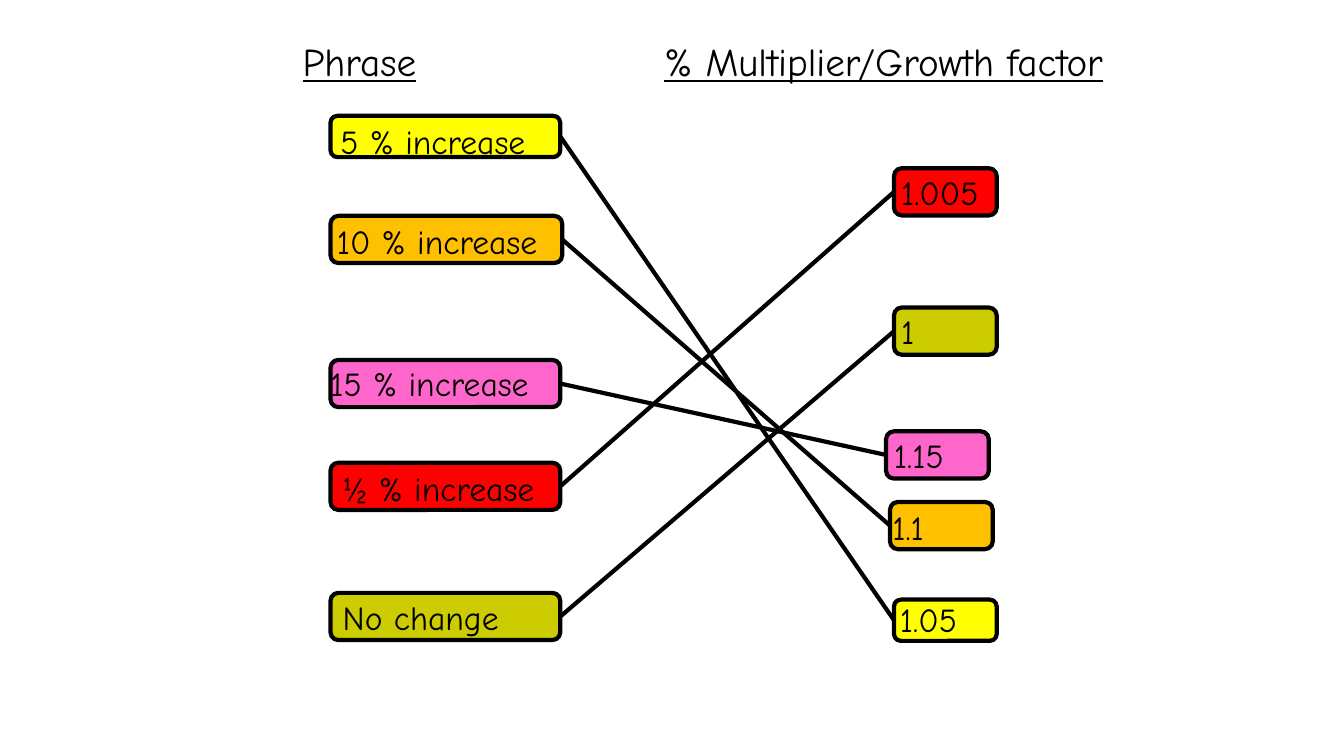
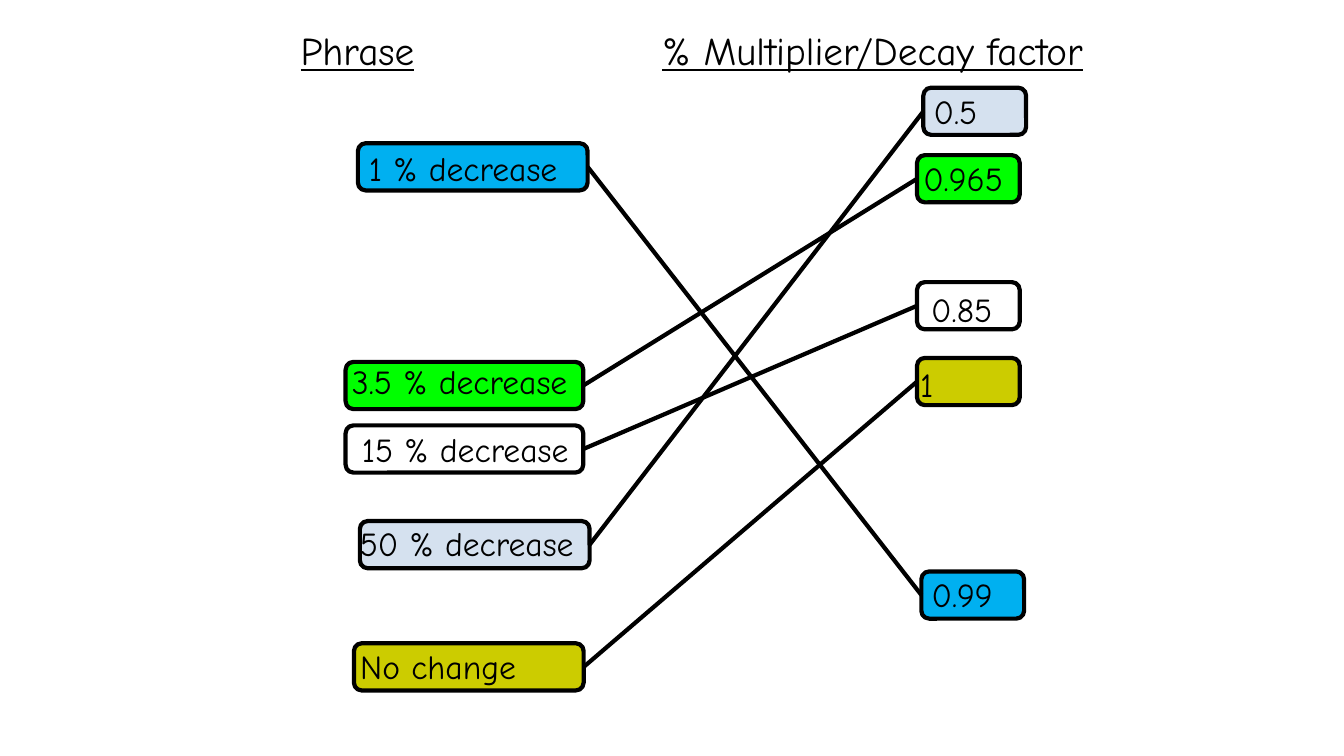
"""Build two matching exercises that link percentage phrases to their multipliers."""
from dataclasses import dataclass
from typing import Any, Optional

from lxml.etree import SubElement as add_element
from pptx import Presentation
from pptx.dml.color import RGBColor
from pptx.enum.shapes import MSO_CONNECTOR as Connector, MSO_SHAPE as Preset
from pptx.enum.text import MSO_ANCHOR as Anchor, MSO_AUTO_SIZE as AutoSize, PP_ALIGN as Align
from pptx.oxml.ns import qn
from pptx.util import Cm, Pt

INK = "000000"
YELLOW, AMBER, PINK, RED, OLIVE = "FFFF00", "FFC000", "FF66CC", "FF0000", "CCCC00"
SKY, GREEN, PALE = "00B0F0", "00FF00", "D5E1EF"
OUTLINE = Pt(3)
FACTOR_COLUMN = Cm(9.12)
LEFT_SITE, RIGHT_SITE = 1, 3

LABEL_FONT = {"name": "Comic Neue", "size": Pt(24), "bold": False}
HEADING_FONT = {**LABEL_FONT, "size": Pt(28)}
LABEL_FRAME = {"word_wrap": True, "auto_size": AutoSize.NONE, "vertical_anchor": Anchor.TOP,
               "margin_right": 0, "margin_bottom": 0}
HEADING_FRAME = {"word_wrap": True, "auto_size": AutoSize.NONE, "vertical_anchor": Anchor.TOP}


@dataclass(frozen=True)
class Label:
    """One box: its words, place and text insets in centimetres."""
    words: str
    left: float
    top: float
    inset_left: float
    inset_top: float
    width: float = 2.59


@dataclass(frozen=True)
class Match:
    """A phrase and the factor it is joined to."""
    colour: Optional[str]
    phrase: Label
    factor: Label
    phrase_height: float = 1.19
    factor_height: float = 1.19


@dataclass(frozen=True)
class Exercise:
    """One slide of matches under a two-column heading."""
    factor_heading: str
    heading_left: float
    heading_top: float
    matches: tuple[Match, ...]


EXERCISES = (
    Exercise("% Multiplier/Growth factor", 7.37, 0.81, (
        Match(YELLOW, Label("5 % increase", 8.33, 2.92, 0.2, 0.07, 5.79),
              Label("1.05", 22.53, 15.11, 0.1, -0.08), 1.04, 1.04),
        Match(AMBER, Label("10 % increase", 8.33, 5.44, 0.1, 0.07, 5.84),
              Label("1.1", 22.43, 12.65, 0, 0.07)),
        Match(PINK, Label("15 % increase", 8.33, 9.07, -0.06, 0.02, 5.79),
              Label("1.15", 22.33, 10.87, 0.14, 0.04)),
        Match(RED, Label("½ % increase", 8.33, 11.66, 0.25, 0.07, 5.79),
              Label("1.005", 22.53, 4.24, 0.12, 0.04)),
        Match(OLIVE, Label("No change", 8.33, 14.94, 0.25, 0.04, 5.79),
              Label("1", 22.53, 7.75, 0.12, 0.02)),
    )),
    Exercise("% Multiplier/Decay factor", 7.32, 0.53, (
        Match(SKY, Label("1 % decrease", 9.02, 3.61, 0.22, 0.07, 5.79),
              Label("0.99", 23.22, 14.4, 0.2, 0)),
        Match(GREEN, Label("3.5 % decrease", 8.71, 9.12, 0.1, -0.08, 5.99),
              Label("0.965", 23.11, 3.91, 0.1, 0.02)),
        Match(None, Label("15 % decrease", 8.71, 10.72, 0.35, 0.02, 5.99),
              Label("0.85", 23.11, 7.11, 0.3, 0.12)),
        Match(PALE, Label("50 % decrease", 9.07, 13.13, -0.06, 0, 5.79),
              Label("0.5", 23.27, 2.21, 0.2, 0.02)),
        Match(OLIVE, Label("No change", 8.92, 16.21, 0.1, 0.02, 5.79),
              Label("1", 23.11, 9.02, 0.02, 0.1)),
    )),
)


def apply(target: Any, values: dict[str, Any]) -> None:
    """Set every named value on the target."""
    for attribute, value in values.items():
        setattr(target, attribute, value)


def paint(colour_format: Any, colour: str) -> None:
    """Give a colour format a hex colour."""
    colour_format.rgb = RGBColor.from_string(colour)


def ink_outline(shape: Any) -> None:
    """Draw the shared outline on a box or connector."""
    shape.line.width = OUTLINE
    shape.line.fill.solid()
    paint(shape.line.fill.fore_color, INK)


def add_run(paragraph: Any, words: str, font: dict[str, Any], underline: bool = False) -> None:
    """Append one formatted run."""
    run = paragraph.add_run()
    run.text = words
    apply(run.font, {**font, "underline": underline})
    paint(run.font.color, INK)


def add_heading(slide: Any, exercise: Exercise) -> None:
    """Write the two underlined column headings in the title."""
    heading = slide.shapes.title
    apply(heading, {"left": Cm(exercise.heading_left), "top": Cm(exercise.heading_top),
                    "width": Cm(22.33), "height": Cm(1.45)})
    apply(heading.text_frame, HEADING_FRAME)
    paragraph = heading.text_frame.paragraphs[0]
    paragraph.alignment = Align.LEFT
    tabs = add_element(paragraph._p.get_or_add_pPr(), qn("a:tabLst"))
    add_element(tabs, qn("a:tab"), pos=str(int(FACTOR_COLUMN)), algn="l")
    add_run(paragraph, "Phrase", HEADING_FONT, True)
    add_run(paragraph, "\t", HEADING_FONT)
    add_run(paragraph, exercise.factor_heading, HEADING_FONT, True)


def add_label(slide: Any, label: Label, height: float, colour: Optional[str]) -> Any:
    """Draw one rounded box with its words."""
    box = slide.shapes.add_shape(Preset.ROUNDED_RECTANGLE, Cm(label.left), Cm(label.top),
                                 Cm(label.width), Cm(height))
    box.shadow.inherit = False
    if colour is None:
        box.fill.background()
    else:
        box.fill.solid()
        paint(box.fill.fore_color, colour)
    ink_outline(box)
    apply(box.text_frame, {**LABEL_FRAME, "margin_left": Cm(label.inset_left),
                           "margin_top": Cm(label.inset_top)})
    paragraph = box.text_frame.paragraphs[0]
    paragraph.alignment = Align.LEFT
    add_run(paragraph, label.words, LABEL_FONT)
    return box


def add_match(slide: Any, match: Match) -> None:
    """Draw a phrase, its factor and the line that joins them."""
    phrase = add_label(slide, match.phrase, match.phrase_height, match.colour)
    factor = add_label(slide, match.factor, match.factor_height, match.colour)
    link = slide.shapes.add_connector(Connector.STRAIGHT, 0, 0, 0, 0)
    link.begin_connect(phrase, RIGHT_SITE)
    link.end_connect(factor, LEFT_SITE)
    ink_outline(link)
    add_element(link._element.spPr, qn("a:effectLst"))


def main() -> None:
    """Build and save the presentation."""
    presentation = Presentation()
    apply(presentation, {"slide_width": Cm(33.87), "slide_height": Cm(19.05)})
    title_only = presentation.slide_layouts[5]
    for exercise in EXERCISES:
        slide = presentation.slides.add_slide(title_only)
        add_heading(slide, exercise)
        for match in exercise.matches:
            add_match(slide, match)
    presentation.save("out.pptx")


if __name__ == "__main__":
    main()
